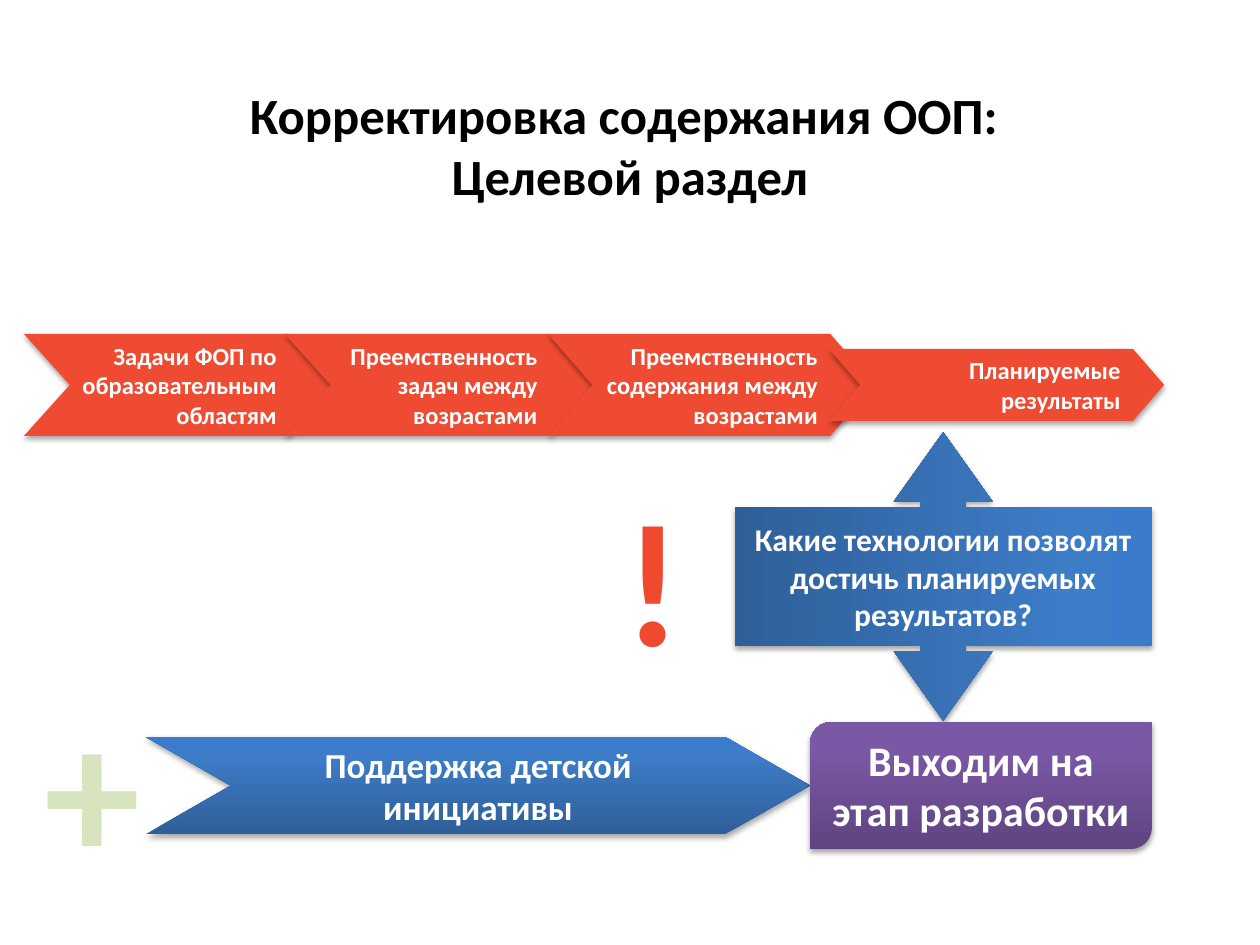
from copy import deepcopy
from dataclasses import dataclass

from lxml import etree
from pptx import Presentation
from pptx import util as u
from pptx.dml import color
from pptx.enum import dml, shapes, text
from pptx.oxml import ns

CHEVRON = shapes.MSO_SHAPE.CHEVRON
LEFT, CENTER, RIGHT = text.PP_ALIGN.LEFT, text.PP_ALIGN.CENTER, text.PP_ALIGN.RIGHT
TOP, MIDDLE = text.MSO_ANCHOR.TOP, text.MSO_ANCHOR.MIDDLE


@dataclass(frozen=True)
class Theme:
    """Colours, fonts and type sizes of the slide."""
    font: str = "Calibri"
    black: str = "000000"
    white: str = "FFFFFF"
    red: str = "EF4B32"
    mark: str = "EF4930"
    plus: tuple = ("9BBB59", "D7E4BD")
    plus_edge: str = "4F6228"
    blue: tuple = ("2F5F99", "3D7CC7", "3A7CCB")
    purple: tuple = ("5F4480", "7B58A6", "7C57A8")
    title: int = 29
    step: int = 14
    question: int = 18
    support: int = 20
    result: int = 24
    mark_size: int = 100
    plus_size: int = 110


THEME = Theme()


def rgb(value):
    """Return a colour from its hex digits."""
    return color.RGBColor.from_string(value)


def add_xml(parent, tag, **attributes):
    """Append a DrawingML element and return it."""
    return etree.SubElement(parent, ns.qn(tag), attributes)


def place(shape, box):
    """Move a shape to a box given in inches."""
    shape.left, shape.top, shape.width, shape.height = map(u.Inches, box)


def write(shape, *lines, size, ink=THEME.white, align=CENTER, anchor=MIDDLE, wrap=True):
    """Write bold lines into a shape and return the last span."""
    frame = shape.text_frame
    frame.word_wrap = wrap
    frame.auto_size = text.MSO_AUTO_SIZE.NONE
    frame.vertical_anchor = anchor
    for index, line in enumerate(lines):
        para = frame.add_paragraph() if index else frame.paragraphs[0]
        para.alignment = align
        span = para.add_run()
        span.text = line
        span.font.name, span.font.size, span.font.bold = THEME.font, u.Pt(size), True
        span.font.color.rgb = rgb(ink)
    return span


def paint(shape, fill):
    """Fill with one colour or with a bottom-to-top gradient of three."""
    if isinstance(fill, str):
        shape.fill.solid()
        shape.fill.fore_color.rgb = rgb(fill)
        return
    shape.fill.gradient()
    shape.fill.gradient_angle = 90
    stops = shape._element.spPr.find(".//" + ns.qn("a:gsLst"))
    stops.append(deepcopy(stops[-1]))
    for stop, shade, position in zip(shape.fill.gradient_stops, fill, (0, 0.8, 1)):
        stop.color.rgb = rgb(shade)
        stop.position = position


def add_block(page, kind, box, fill, adjustments=()):
    """Add a borderless filled shape with a soft shadow below."""
    shape = page.shapes.add_shape(kind, *map(u.Inches, box))
    for index, value in enumerate(adjustments):
        shape.adjustments[index] = value
    paint(shape, fill)
    shape.line.fill.background()
    shape.shadow.inherit = False
    effects = shape._element.spPr.find(ns.qn("a:effectLst"))
    shadow = add_xml(effects, "a:outerShdw", blurRad=str(u.Pt(3.1)), dist=str(u.Pt(1.8)),
                     dir="5400000", rotWithShape="0")
    add_xml(add_xml(shadow, "a:srgbClr", val=THEME.black), "a:alpha", val="35000")
    return shape


def add_title(page, box):
    """Set the two-line heading."""
    place(page.shapes.title, box)
    write(page.shapes.title, "Корректировка содержания ООП: ", "Целевой раздел",
          size=THEME.title, ink=THEME.black)


def add_steps(page, box):
    """Add the overlapping chain of red chevrons along the box's middle."""
    left, top, width, height = box
    steps = [
        (0, 2.47, height, 0.45, "Задачи ФОП по образовательным областям"),
        (2.07, 2.47, height, 0.45, "Преемственность задач между возрастами"),
        (4.16, 2.59, height, 0.433, "Преемственность содержания между возрастами"),
        (6.39, width - 6.39, 0.57, 0.433, "Планируемые результаты"),
    ]
    for offset, span_width, tall, point, label in steps:
        step_box = (left + offset, top + (height - tall) / 2, span_width, tall)
        write(add_block(page, CHEVRON, step_box, THEME.red, [point]), label,
              size=THEME.step, align=RIGHT)


def add_question(page, box):
    """Add the upright two-way arrow callout, turned about the box's centre."""
    left, top, width, height = box
    shift = (width - height) / 2
    callout = add_block(page, shapes.MSO_SHAPE.LEFT_RIGHT_ARROW_CALLOUT,
                        (left + shift, top - shift, height, width), THEME.blue,
                        [0.154, 0.171, 0.24, 0.481])
    callout.rotation = 90
    callout.text_frame._txBody.bodyPr.set("vert", "vert270")
    write(callout, "Какие технологии позволят достичь планируемых результатов?",
          size=THEME.question)


def add_outcome(page, box):
    """Add the support arrow that leads into the purple result block."""
    left, top, width, height = box
    arrow_width, arrow_height = 5.27, 0.77
    arrow = add_block(page, CHEVRON,
                      (left, top + (height - arrow_height) / 2, arrow_width, arrow_height),
                      THEME.blue, [0.874])
    write(arrow, "Поддержка детской инициативы", size=THEME.support)
    result = add_block(page, shapes.MSO_SHAPE.ROUND_2_DIAG_RECTANGLE,
                       (left + arrow_width, top, width - arrow_width, height), THEME.purple)
    write(result, "Выходим на этап разработки", size=THEME.result, anchor=TOP)


def add_sign(page, box, sign, edge, edge_width, **format):
    """Add one huge outlined character and return its span."""
    span = write(page.shapes.add_textbox(*map(u.Inches, box)), sign, anchor=TOP, **format)
    outline = etree.Element(ns.qn("a:ln"), w=str(u.Pt(edge_width)))
    add_xml(add_xml(outline, "a:solidFill"), "a:srgbClr", val=edge)
    span.font._element.insert(0, outline)
    return span


def add_signs(page, mark_box, plus_box):
    """Add the exclamation mark and the patterned plus."""
    add_sign(page, mark_box, "!", THEME.black, 0.5, size=THEME.mark_size, ink=THEME.mark)
    plus = add_sign(page, plus_box, "+", THEME.plus_edge, 1, size=THEME.plus_size, wrap=False)
    fill = plus.font.fill
    fill.patterned()
    fill.pattern = dml.MSO_PATTERN.NARROW_HORIZONTAL
    fill.fore_color.rgb, fill.back_color.rgb = map(rgb, THEME.plus)


def main():
    """Build and save the slide."""
    deck = Presentation()
    deck.slide_width, deck.slide_height = u.Inches(10), u.Inches(7.5)
    page = deck.slides.add_slide(deck.slide_layouts[5])
    add_title(page, (0.5, 0.56, 9, 1.18))
    add_steps(page, (0.19, 2.65, 9.05, 0.81))
    add_question(page, (5.83, 3.43, 3.31, 2.29))
    add_outcome(page, (1.16, 5.73, 7.98, 1.01))
    add_signs(page, (4.35, 3.69, 1.66, 1.78), (0.25, 5.26, 0.97, 1.95))
    deck.save("out.pptx")


if __name__ == "__main__":
    main()
